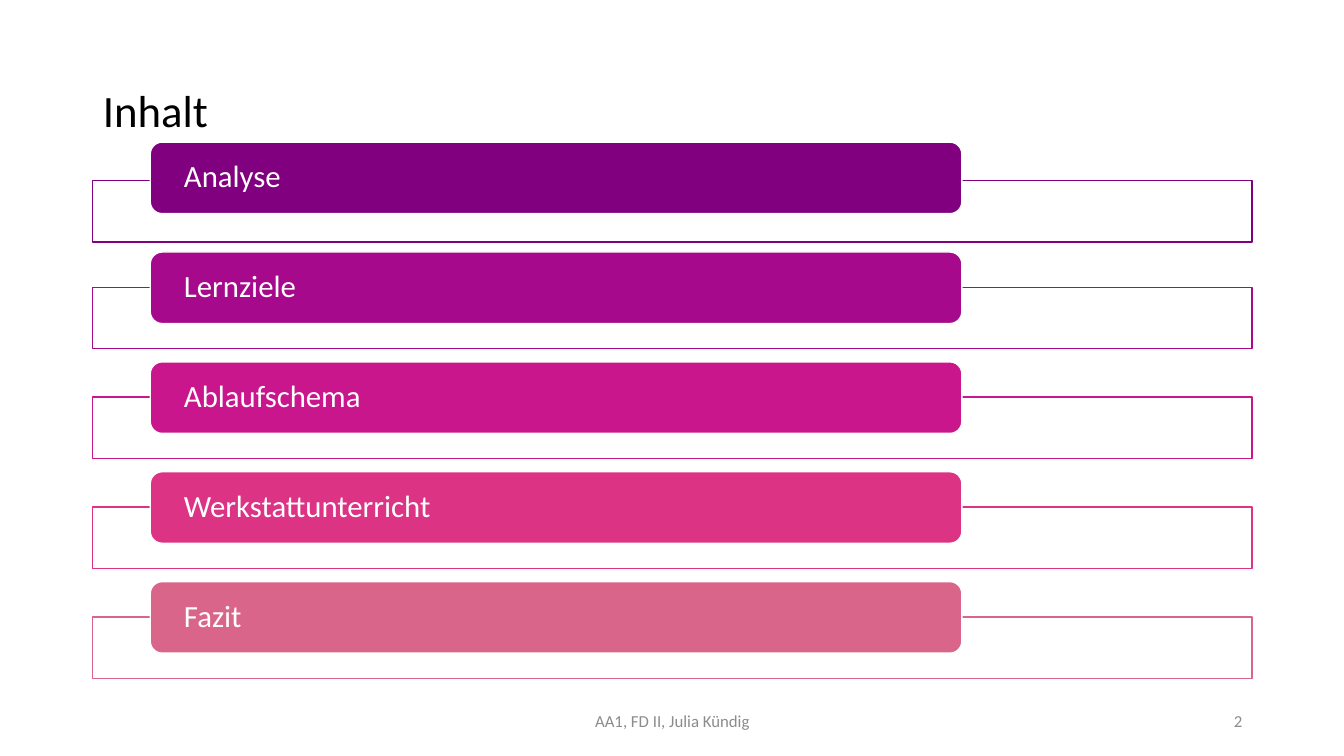
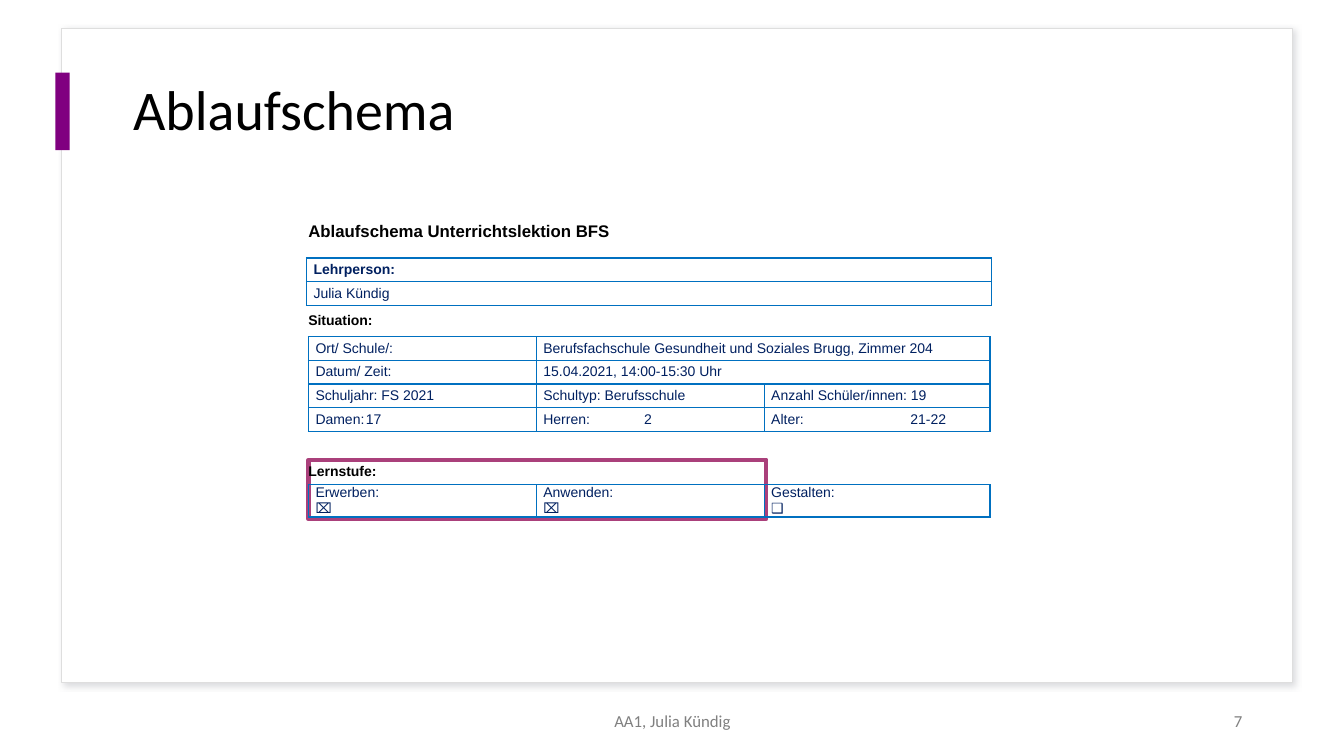
from lxml import etree
from pptx import Presentation
from pptx.dml.color import RGBColor
from pptx.enum import shapes, text
from pptx.oxml import ns
from pptx.util import Inches, Pt

BLACK = RGBColor(0x00, 0x00, 0x00)
WHITE = RGBColor(0xFF, 0xFF, 0xFF)
PURPLE = RGBColor(0x80, 0x00, 0x80)
VIOLET = RGBColor(0xA7, 0x09, 0x8C)
MAGENTA = RGBColor(0xCA, 0x16, 0x8C)
PINK = RGBColor(0xDC, 0x33, 0x85)
ROSE = RGBColor(0xDA, 0x65, 0x8A)
LIGHT_GREY = RGBColor(0xDE, 0xDE, 0xDE)
FOOTER_GREY = RGBColor(0x8C, 0x8C, 0x8C)
DARK_GREY = RGBColor(0x80, 0x80, 0x80)
HIGHLIGHT = RGBColor(0xAA, 0x40, 0x7B)
NAVY = RGBColor(0x00, 0x20, 0x60)
BLUE = RGBColor(0x00, 0x70, 0xC0)
SHADOW = RGBColor(0xB6, 0xB7, 0xBD)

LEFT, CENTER, RIGHT = text.PP_ALIGN.LEFT, text.PP_ALIGN.CENTER, text.PP_ALIGN.RIGHT
RECT = shapes.MSO_SHAPE.RECTANGLE
ROUNDED = shapes.MSO_SHAPE.ROUNDED_RECTANGLE


# Shared helpers
def add_xml(parent, tag, **attributes):
    return etree.SubElement(parent, ns.qn(tag), attributes)


def write(frame, words, size=10, font="Arial", color=NAVY, bold=False,
          align=LEFT, spacing=None, tab=None):
    """Fill a text frame, one paragraph for each line of words."""
    for index, line in enumerate(words.split("\n")):
        para = frame.add_paragraph() if index else frame.paragraphs[0]
        para.alignment = align
        if spacing:
            para.line_spacing = spacing
        if tab:
            tabs = add_xml(para._p.get_or_add_pPr(), "a:tabLst")
            add_xml(tabs, "a:tab", pos=str(Inches(tab)), algn="l")
        span = para.add_run()
        span.text = line
        span.font.name = font
        span.font.size = Pt(size)
        span.font.bold = bold
        span.font.color.rgb = color


def set_frame(frame, side=0.1, edge=0.05):
    frame.word_wrap = True
    frame.auto_size = text.MSO_AUTO_SIZE.NONE
    frame.vertical_anchor = text.MSO_ANCHOR.MIDDLE
    frame.margin_left = frame.margin_right = Inches(side)
    frame.margin_top = frame.margin_bottom = Inches(edge)
    return frame


def add_text(page, place, words, **style):
    box = page.shapes.add_textbox(*map(Inches, place))
    write(set_frame(box.text_frame), words, **style)


def add_box(page, place, kind=RECT, fill=None, line=None, width=1):
    box = page.shapes.add_shape(kind, *map(Inches, place))
    box.shadow.inherit = False
    if fill is None:
        box.fill.background()
    else:
        box.fill.solid()
        box.fill.fore_color.rgb = fill
    if line is None:
        box.line.fill.background()
    else:
        box.line.color.rgb = line
        box.line.width = Pt(width)
    return box


def add_page(deck, title, place, size, footer, number, color):
    """Start a slide with its title and footer."""
    page = deck.slides.add_slide(deck.slide_layouts[5])
    head = page.shapes.title
    head.left, head.top, head.width, head.height = map(Inches, place)
    write(set_frame(head.text_frame), title, size=size, font="Calibri",
          color=BLACK, spacing=0.9)
    style = dict(size=12, font="Calibri", color=color)
    add_text(page, (4.42, 6.95, 4.5, 0.4), footer, align=CENTER, **style)
    add_text(page, (9.42, 6.95, 3, 0.4), number, align=RIGHT, **style)
    return page


# Contents slide
def add_chapter(page, left, top, width, name, color, drop):
    """A framed band with a coloured label overlapping its upper edge."""
    frame = add_box(page, (left, top + drop, width, 0.61), fill=WHITE, line=color)
    shade = frame.element.spPr.find(ns.qn("a:solidFill"))[0]
    add_xml(shade, "a:alpha", val="90000")
    label = add_box(page, (left + 0.57, top, width * 0.7, 0.71), ROUNDED,
                    fill=color, line=WHITE)
    write(set_frame(label.text_frame, side=0.3, edge=0), name, size=22,
          font="Calibri", color=WHITE, spacing=0.9)


def build_contents(deck):
    page = add_page(deck, "Inhalt", (0.92, 0.4, 11.5, 1.45), 32,
                    "AA1, FD II, Julia Kündig", "2", FOOTER_GREY)
    chapters = [("Analyse", PURPLE), ("Lernziele", VIOLET),
                ("Ablaufschema", MAGENTA), ("Werkstattunterricht", PINK),
                ("Fazit", ROSE)]
    for index, (name, color) in enumerate(chapters):
        drop = 0.35 if index else 0.38
        add_chapter(page, 0.92, 1.41 + index * 1.09, 11.5, name, color, drop)


# Lesson plan slide
def add_card(page, place):
    """White card with a soft shadow and an accent bar, behind the title."""
    left, top, width, height = place
    card = add_box(page, place, fill=WHITE, line=LIGHT_GREY)
    effects = card.element.spPr.find(ns.qn("a:effectLst"))
    shadow = add_xml(effects, "a:outerShdw", blurRad=str(Pt(4)), dist=str(Pt(3)),
                     dir="2700000", algn="tl", rotWithShape="0")
    shade = add_xml(shadow, "a:srgbClr", val=str(SHADOW))
    add_xml(shade, "a:alpha", val="50000")
    page.shapes.title.element.addprevious(card.element)
    add_box(page, (left - 0.06, top + 0.44, 0.14, 0.77), fill=PURPLE)


def set_borders(cell):
    properties = cell._tc.get_or_add_tcPr()
    for index, side in enumerate(("a:lnL", "a:lnR", "a:lnT", "a:lnB")):
        line = etree.Element(ns.qn(side), w=str(Pt(1)))
        add_xml(add_xml(line, "a:solidFill"), "a:srgbClr", val=str(BLUE))
        properties.insert(index, line)


def add_grid(page, left, top, columns, height, rows, bold_rows=(), tab=None):
    """Bordered table; None joins a cell to the one on its left."""
    shape = page.shapes.add_table(len(rows), len(columns), Inches(left), Inches(top),
                                  Inches(sum(columns)), Inches(height * len(rows)))
    table = shape.table
    table.first_row = table.horz_banding = False
    for column, width in zip(table.columns, columns):
        column.width = Inches(width)
    for r, row in enumerate(rows):
        table.rows[r].height = Inches(height)
        for c, words in enumerate(row):
            cell = table.cell(r, c)
            cell.fill.background()
            set_borders(cell)
            cell.vertical_anchor = text.MSO_ANCHOR.MIDDLE
            cell.margin_left = cell.margin_right = Inches(0.07)
            cell.margin_top = cell.margin_bottom = 0
            if words is None:
                table.cell(r, c - 1).merge(cell)
            else:
                stop = tab if c == len(row) - 1 else None
                write(cell.text_frame, words, bold=r in bold_rows, tab=stop)


def add_lesson_plan(page, left, top):
    """Headings and tables of the lesson plan."""
    columns = (2.26, 2.26, 2.24)
    headings = [(0, "Ablaufschema Unterrichtslektion BFS", 12),
                (0.88, "Situation:", 10), (2.38, "Lernstufe:", 10)]
    add_box(page, (left, top + 2.42, 4.54, 0.59), line=HIGHLIGHT, width=3)
    add_grid(page, left - 0.02, top + 0.42, (6.79,), 0.235,
             [["Lehrperson:"], ["Julia Kündig"]], bold_rows=(0,))
    add_grid(page, left, top + 1.2, columns, 0.235, [
        ["Ort/ Schule/:", "Berufsfachschule Gesundheit und Soziales Brugg, Zimmer 204", None],
        ["Datum/ Zeit:", "15.04.2021, 14:00-15:30 Uhr", None],
        ["Schuljahr: FS 2021", "Schultyp: Berufsschule", "Anzahl Schüler/innen: 19"],
        ["Damen:\t17", "Herren:\t\t2", "Alter:\t21-22"],
    ], tab=1.38)
    add_grid(page, left, top + 2.67, columns, 0.32,
             [["Erwerben:\n⌧", "Anwenden:\n⌧", "Gestalten:\n❑"]])
    for offset, words, size in headings:
        add_text(page, (left - 0.1, top + offset, 4.5, 0.3), words,
                 size=size, color=BLACK, bold=True)


def build_lesson_plan(deck):
    page = add_page(deck, "Ablaufschema", (1.22, 0.56, 11.19, 1.11), 40,
                    "AA1, Julia Kündig", "7", DARK_GREY)
    add_card(page, (0.61, 0.28, 12.21, 6.49))
    add_lesson_plan(page, 3.06, 2.14)


def main():
    deck = Presentation()
    deck.slide_width, deck.slide_height = Inches(13.33), Inches(7.5)
    build_contents(deck)
    build_lesson_plan(deck)
    deck.save("out.pptx")


if __name__ == "__main__":
    main()
